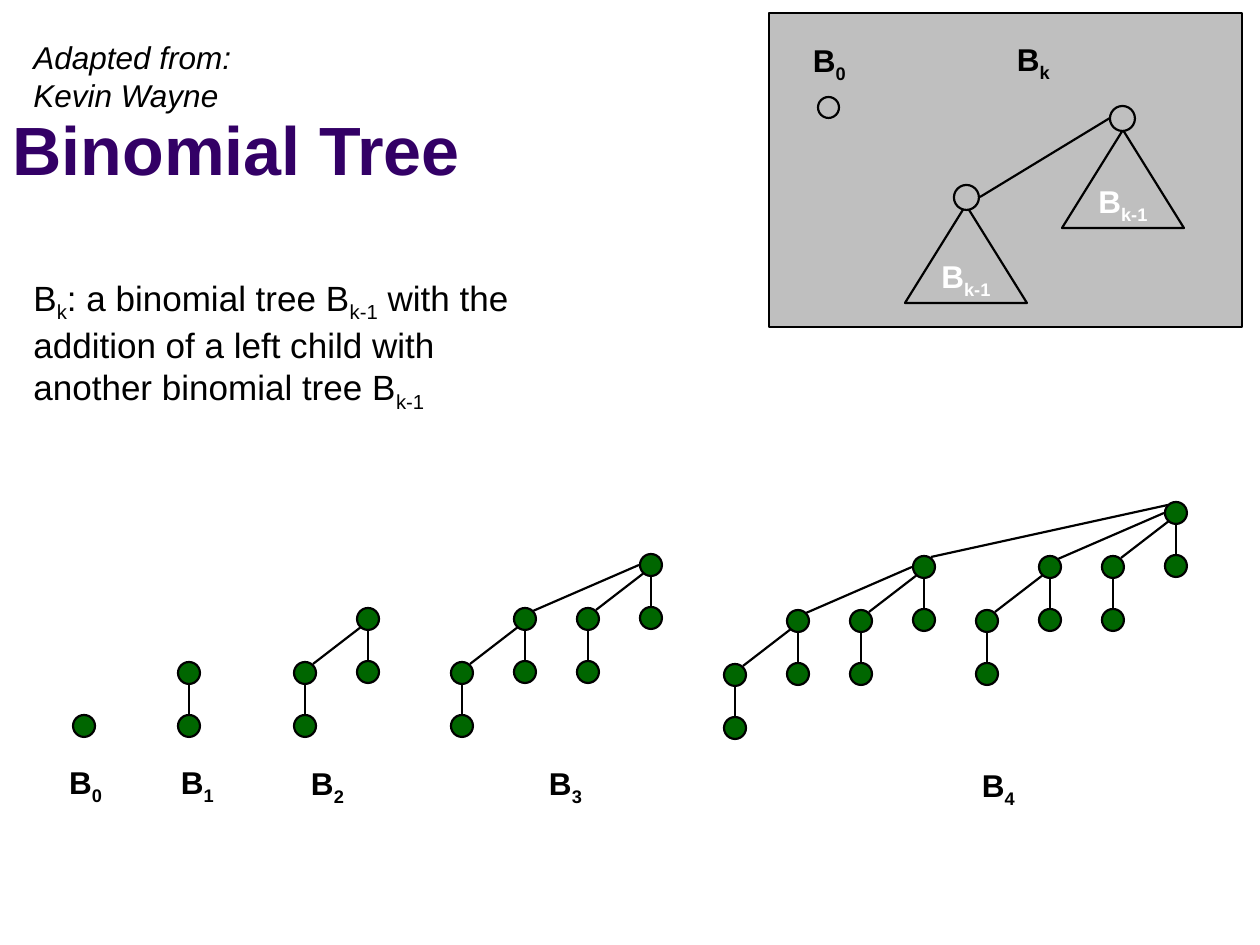
from pptx import Presentation
from pptx.dml.color import RGBColor
from pptx.enum.shapes import MSO_CONNECTOR, MSO_SHAPE
from pptx.enum.text import MSO_ANCHOR, MSO_AUTO_SIZE, PP_ALIGN
from pptx.oxml import parse_xml
from pptx.oxml.ns import nsdecls
from pptx.util import Pt

PX = 7257  # EMU in one px, 126 px to the inch
BLACK, WHITE, GREY, GREEN, PURPLE = "000000", "FFFFFF", "BFBFBF", "006600", "330066"
color = RGBColor.from_string

presentation = Presentation()
presentation.slide_width = 1260 * PX
presentation.slide_height = 945 * PX
slide = presentation.slides.add_slide(presentation.slide_layouts[5])


def add_figure(kind, left, top, width, height, fill, outlined=True):
    shape = slide.shapes.add_shape(kind, left * PX, top * PX, width * PX, height * PX)
    shape.shadow.inherit = False
    shape.fill.solid()
    shape.fill.fore_color.rgb = color(fill)
    if outlined:
        shape.line.color.rgb = color(BLACK)
        shape.line.width = Pt(1.25)
    else:
        shape.line.fill.background()
    return shape


def add_line(x1, y1, x2, y2):
    line = slide.shapes.add_connector(
        MSO_CONNECTOR.STRAIGHT, x1 * PX, y1 * PX, x2 * PX, y2 * PX)
    line.line.color.rgb = color(BLACK)
    line.line.width = Pt(1.25)
    line._element.spPr.append(parse_xml(f"<a:effectLst {nsdecls('a')}/>"))


# Each entry: shape, runs (every second one is a subscript), size, colour, bold, italic, alignment
texts = []

# Title
title = slide.shapes.title
title.left, title.top, title.width, title.height = 0, 16 * PX, 1040 * PX, 179 * PX
title.text_frame.vertical_anchor = MSO_ANCHOR.BOTTOM
title.text_frame.auto_size = MSO_AUTO_SIZE.NONE
texts.append((title, ["Binomial Tree"], 39, PURPLE, True, False, PP_ALIGN.LEFT))

# Recursive definition panel
add_figure(MSO_SHAPE.RECTANGLE, 769, 13, 473, 314, GREY)
for left, top in [(905, 205), (1062, 130)]:
    subtree = add_figure(MSO_SHAPE.ISOSCELES_TRIANGLE, left, top, 122, 98, GREY)
    subtree.text_frame.vertical_anchor = MSO_ANCHOR.MIDDLE
    subtree.text_frame.word_wrap = False
    texts.append((subtree, ["B", "k-1"], 18, WHITE, True, False, PP_ALIGN.CENTER))
add_line(958, 207, 966, 204)
add_line(980, 197, 1110, 118)
for left, top, diameter in [(954, 185, 25), (1110, 106, 25), (818, 97, 21)]:
    add_figure(MSO_SHAPE.OVAL, left, top, diameter, diameter, GREY)
for left, top, order in [(786, 35, "0"), (990, 34, "k")]:
    label = add_figure(MSO_SHAPE.RECTANGLE, left, top, 87, 50, GREY, outlined=False)
    label.text_frame.vertical_anchor = MSO_ANCHOR.TOP
    label.text_frame.word_wrap = True
    texts.append((label, ["B", order], 18, BLACK, True, False, PP_ALIGN.CENTER))

# Binomial trees: columns of two nodes, raised by one level per set bit of the column index
RADIUS, COLUMN, LEVEL, STEM = 11, 63, 54, 53
# Distance in columns to the parent: offsets of the edge's ends from the two node centres
EDGE_ENDS = {1: (8, -9, -7, 8), 2: (8, -8, -12, 0), 4: (7, -10, -8, -8)}
# First column centre, its upper node's centre, label left and top
trees = [(84, 726, 42, 757), (189, 673, 154, 757), (305, 673, 284, 758),
         (462, 673, 522, 758), (735, 675, 955, 760)]
for order, (first_x, first_y, label_left, label_top) in enumerate(trees):
    columns = max(1, 2 ** order // 2)
    centres = [(first_x + COLUMN * i, first_y - LEVEL * bin(i).count("1"))
               for i in range(columns)]
    for i, (x, y) in enumerate(centres):
        node_centres = [y] if order == 0 else [y, y + STEM]
        for node_y in node_centres:
            add_figure(MSO_SHAPE.OVAL, x - RADIUS, node_y - RADIUS,
                       2 * RADIUS, 2 * RADIUS, GREEN)
        if order > 0:
            add_line(x, y + STEM - 12, x, y + 12)
        parent = i | (i + 1)
        if parent < columns:
            parent_x, parent_y = centres[parent]
            dx1, dy1, dx2, dy2 = EDGE_ENDS[parent - i]
            add_line(x + dx1, y + dy1, parent_x + dx2, parent_y + dy2)
    label = slide.shapes.add_textbox(label_left * PX, label_top * PX, 87 * PX, 50 * PX)
    label.text_frame.word_wrap = True
    texts.append((label, ["B", str(order)], 18, BLACK, True, False, PP_ALIGN.CENTER))

# Credit and definition
credit = slide.shapes.add_textbox(21 * PX, 32 * PX, 230 * PX, 89 * PX)
credit.text_frame.word_wrap = True
texts.append((credit, ["Adapted from: Kevin Wayne"], 18, BLACK, False, True, PP_ALIGN.LEFT))
definition = slide.shapes.add_textbox(21 * PX, 270 * PX, 525 * PX, 140 * PX)
definition.text_frame.word_wrap = True
texts.append((definition, ["B", "k", ": a binomial tree B", "k-1",
                           " with the addition of a left child with another binomial tree B",
                           "k-1"], 20, BLACK, False, False, PP_ALIGN.LEFT))

# Write all text
for shape, runs, size, text_color, bold, italic, alignment in texts:
    paragraph = shape.text_frame.paragraphs[0]
    paragraph.alignment = alignment
    for i, text in enumerate(runs):
        run = paragraph.add_run()
        run.text = text
        run.font.name = "Arial"
        run.font.size = Pt(size)
        run.font.bold = bold
        run.font.italic = italic
        run.font.color.rgb = color(text_color)
        if i % 2 == 1:
            run._r.get_or_add_rPr().set("baseline", "-25000")

presentation.save("out.pptx")
